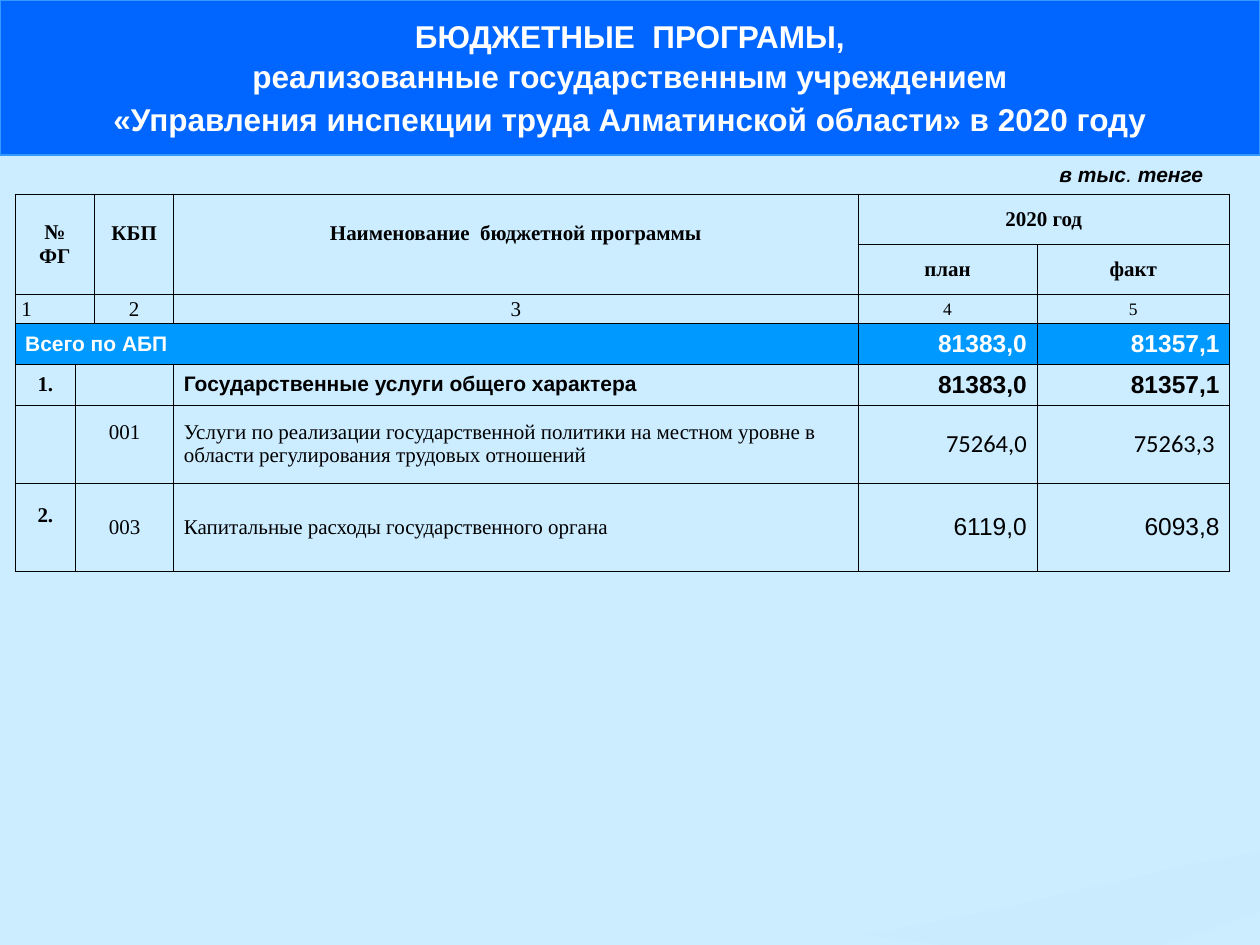
from dataclasses import dataclass

from lxml.etree import SubElement
from pptx import Presentation
from pptx.dml.color import RGBColor
from pptx.enum.text import MSO_ANCHOR, MSO_AUTO_SIZE, PP_ALIGN
from pptx.oxml.ns import qn
from pptx.util import Inches, Pt


@dataclass(frozen=True)
class Theme:
    background: str = "CCECFF"
    swoosh: str = "C6E7FC"
    banner: str = "0066FF"
    banner_line: str = "3399FF"
    total: str = "0099FF"
    ink: str = "000000"
    light: str = "FFFFFF"
    sans: str = "Arial"
    serif: str = "Times New Roman"
    figures: str = "Calibri"
    title_size: int = 18
    amount_size: int = 14
    text_size: int = 12
    small_size: int = 10
    rule: float = 0.5


THEME = Theme()

HEAD = {"bold": True}
SMALL = {"size": THEME.small_size}
LABEL = {"align": PP_ALIGN.LEFT, "inset": 0.08}
SANS_LABEL = {**LABEL, "name": THEME.sans, "bold": True}
AMOUNT = {"align": PP_ALIGN.RIGHT, "inset": 0.08, "name": THEME.sans,
          "size": THEME.amount_size}
BOLD_AMOUNT = {**AMOUNT, "bold": True}
CALIBRI_AMOUNT = {**AMOUNT, "name": THEME.figures}
TOTAL = {"color": THEME.light, "fill": THEME.total}
RAISED = {"bottom": 0.19}

COLUMNS = (0.48, 0.15, 0.63, 5.43, 1.42, 1.53)
ROWS = (0.4, 0.4, 0.23, 0.32, 0.32, 0.62, 0.7)

# row, column, row span, column span, text, format
CELLS = (
    (0, 0, 2, 2, "№\nФГ", HEAD),
    (0, 2, 2, 1, "КБП", {**HEAD, **RAISED}),
    (0, 3, 2, 1, "Наименование  бюджетной программы", {**HEAD, **RAISED}),
    (0, 4, 1, 2, "2020 год", HEAD),
    (1, 4, 1, 1, "план", HEAD),
    (1, 5, 1, 1, "факт", HEAD),
    (2, 0, 1, 2, "1", {"align": PP_ALIGN.LEFT, "inset": 0.05}),
    (2, 2, 1, 1, "2", {}),
    (2, 3, 1, 1, "3", {}),
    (2, 4, 1, 1, "4", SMALL),
    (2, 5, 1, 1, "5", SMALL),
    (3, 0, 1, 4, "Всего по АБП", {**SANS_LABEL, **TOTAL}),
    (3, 4, 1, 1, "81383,0", {**BOLD_AMOUNT, **TOTAL}),
    (3, 5, 1, 1, "81357,1", {**BOLD_AMOUNT, **TOTAL}),
    (4, 0, 1, 1, "1.", HEAD),
    (4, 1, 1, 2, "", {}),
    (4, 3, 1, 1, "Государственные услуги общего характера", SANS_LABEL),
    (4, 4, 1, 1, "81383,0", BOLD_AMOUNT),
    (4, 5, 1, 1, "81357,1", BOLD_AMOUNT),
    (5, 1, 1, 2, "001", RAISED),
    (5, 3, 1, 1, "Услуги по реализации государственной политики на местном уровне "
                 "в области регулирования трудовых отношений", LABEL),
    (5, 4, 1, 1, "75264,0", CALIBRI_AMOUNT),
    (5, 5, 1, 1, "75263,3", {**CALIBRI_AMOUNT, "inset": 0.12}),
    (6, 0, 1, 1, "2.", {**HEAD, **RAISED}),
    (6, 1, 1, 2, "003", {}),
    (6, 3, 1, 1, "Капитальные расходы государственного органа", LABEL),
    (6, 4, 1, 1, "6119,0", AMOUNT),
    (6, 5, 1, 1, "6093,8", AMOUNT),
)

SWOOSH = ((10, 6.76), (9.45, 6.86), (8.85, 7), (7.77, 7.25), (7.07, 7.38), (6.85, 7.42),
          (7.15, 7.46), (7.47, 7.5), (9.23, 7.5), (9.6, 7.38), (10, 7.24))


def rgb(value):
    return RGBColor.from_string(value)


def paint(fill, color):
    fill.solid()
    fill.fore_color.rgb = rgb(color)


def set_font(font, color=THEME.ink, **values):
    for attribute, value in values.items():
        setattr(font, attribute, value)
    font.color.rgb = rgb(color)


def place(shape, box):
    for side, value in zip(("left", "top", "width", "height"), box):
        setattr(shape, side, value)


def add_swoosh(slide):
    points = [(Inches(x), Inches(y)) for x, y in SWOOSH]
    builder = slide.shapes.build_freeform(*points[0])
    builder.add_line_segments(points[1:])
    swoosh = builder.convert_to_shape()
    swoosh.shadow.inherit = False
    swoosh.line.fill.background()
    paint(swoosh.fill, THEME.swoosh)
    color = swoosh.element.spPr.find(f"{qn('a:solidFill')}/{qn('a:srgbClr')}")
    SubElement(color, qn("a:alpha"), val="30000")


def add_banner(slide, box):
    banner = slide.shapes.title
    place(banner, box)
    paint(banner.fill, THEME.banner)
    banner.line.color.rgb = rgb(THEME.banner_line)
    banner.line.width = Pt(0.75)
    frame = banner.text_frame
    frame.text = ("БЮДЖЕТНЫЕ  ПРОГРАМЫ,\n"
                  "реализованные государственным учреждением\n"
                  "«Управления инспекции труда Алматинской области» в 2020 году")
    frame.auto_size = MSO_AUTO_SIZE.NONE
    frame.vertical_anchor = MSO_ANCHOR.MIDDLE
    for paragraph, gap in zip(frame.paragraphs, (0, 1, 3)):
        paragraph.alignment = PP_ALIGN.CENTER
        paragraph.space_before = Pt(gap)
        set_font(paragraph.runs[0].font, THEME.light, name=THEME.sans,
                 size=Pt(THEME.title_size), bold=True)


def add_unit_note(slide, box):
    frame = slide.shapes.add_textbox(*box).text_frame
    frame.word_wrap = True
    for text, bold in (("в тыс", True), (". ", False), ("тенге", True)):
        run = frame.paragraphs[0].add_run()
        run.text = text
        set_font(run.font, name=THEME.sans, size=Pt(THEME.text_size), bold=bold, italic=True)


def prepare_cell(cell):
    """Clear the banded fill, tighten the margins and rule all four sides."""
    for side in ("left", "right", "top", "bottom"):
        setattr(cell, f"margin_{side}", Inches(0.01))
    cell.vertical_anchor = MSO_ANCHOR.MIDDLE
    properties = cell._tc.get_or_add_tcPr()
    for tag in ("a:lnL", "a:lnR", "a:lnT", "a:lnB"):
        line = SubElement(properties, qn(tag), w=str(Pt(THEME.rule)))
        SubElement(SubElement(line, qn("a:solidFill")), qn("a:srgbClr"), val=THEME.ink)
    cell.fill.background()


def fill_cell(cell, text, align=PP_ALIGN.CENTER, inset=0.01, bottom=0.01, fill=None,
              color=THEME.ink, name=THEME.serif, size=THEME.text_size, bold=False):
    cell.margin_left = cell.margin_right = Inches(inset)
    cell.margin_bottom = Inches(bottom)
    if fill:
        paint(cell.fill, fill)
    cell.text = text
    for paragraph in cell.text_frame.paragraphs:
        paragraph.alignment = align
        for run in paragraph.runs:
            set_font(run.font, color, name=name, size=Pt(size), bold=bold)


def add_budget_table(slide, left, top):
    table = slide.shapes.add_table(len(ROWS), len(COLUMNS), left, top,
                                   Inches(sum(COLUMNS)), Inches(sum(ROWS))).table
    table.first_row = table.horz_banding = False
    for column, width in zip(table.columns, COLUMNS):
        column.width = Inches(width)
    for row, height in zip(table.rows, ROWS):
        row.height = Inches(height)
    for cell in table.iter_cells():
        prepare_cell(cell)
    for row, column, row_span, column_span, text, style in CELLS:
        cell = table.cell(row, column)
        if row_span * column_span > 1:
            cell.merge(table.cell(row + row_span - 1, column + column_span - 1))
        fill_cell(cell, text, **style)


def main():
    presentation = Presentation()
    presentation.slide_width, presentation.slide_height = Inches(10), Inches(7.5)
    slide = presentation.slides.add_slide(presentation.slide_layouts[5])
    paint(slide.background.fill, THEME.background)
    add_swoosh(slide)
    add_budget_table(slide, Inches(0.12), Inches(1.54))
    add_banner(slide, (0, 0, presentation.slide_width, Inches(1.23)))
    add_unit_note(slide, (Inches(8.31), Inches(1.23), Inches(1.42), Inches(0.3)))
    presentation.save("out.pptx")


if __name__ == "__main__":
    main()
